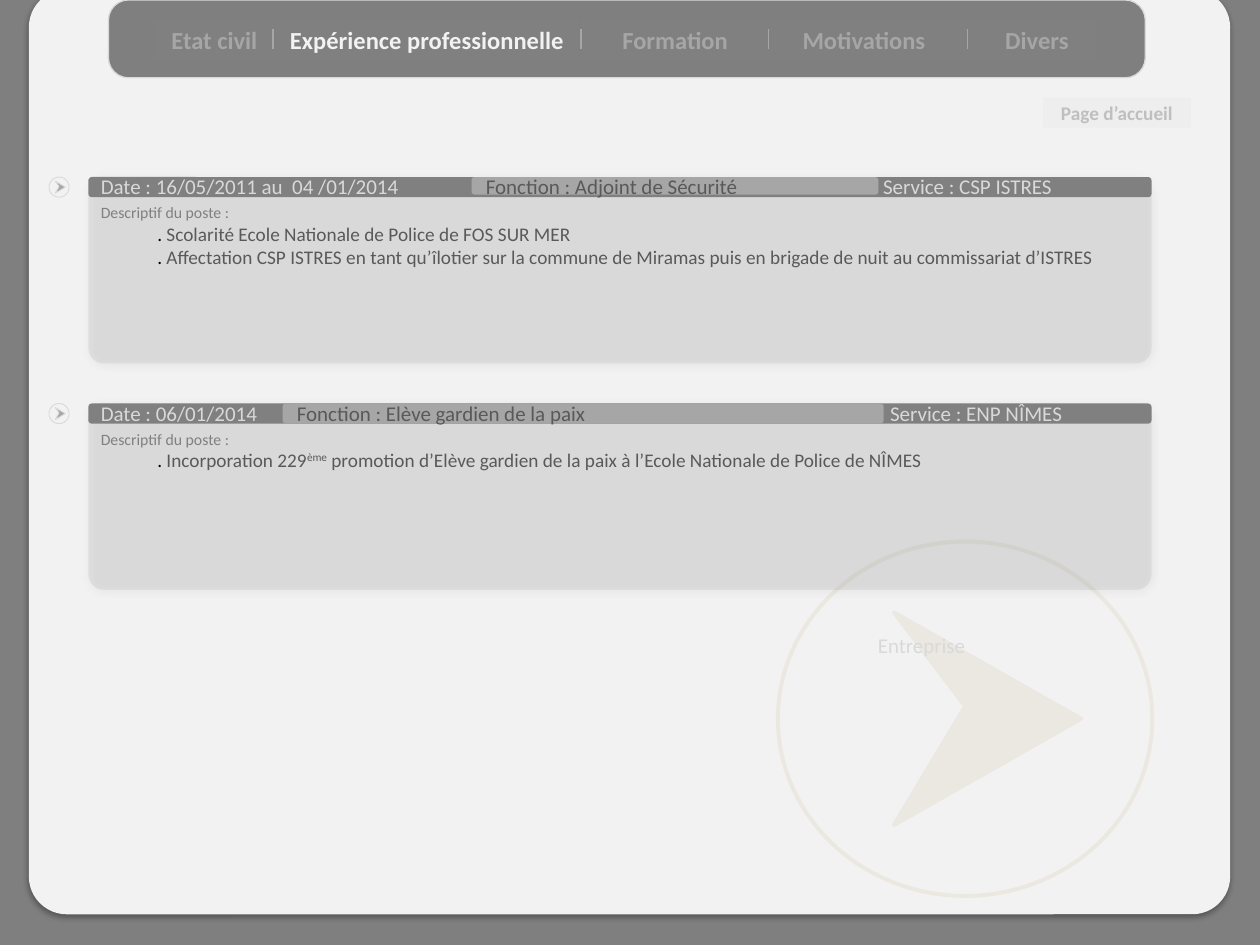
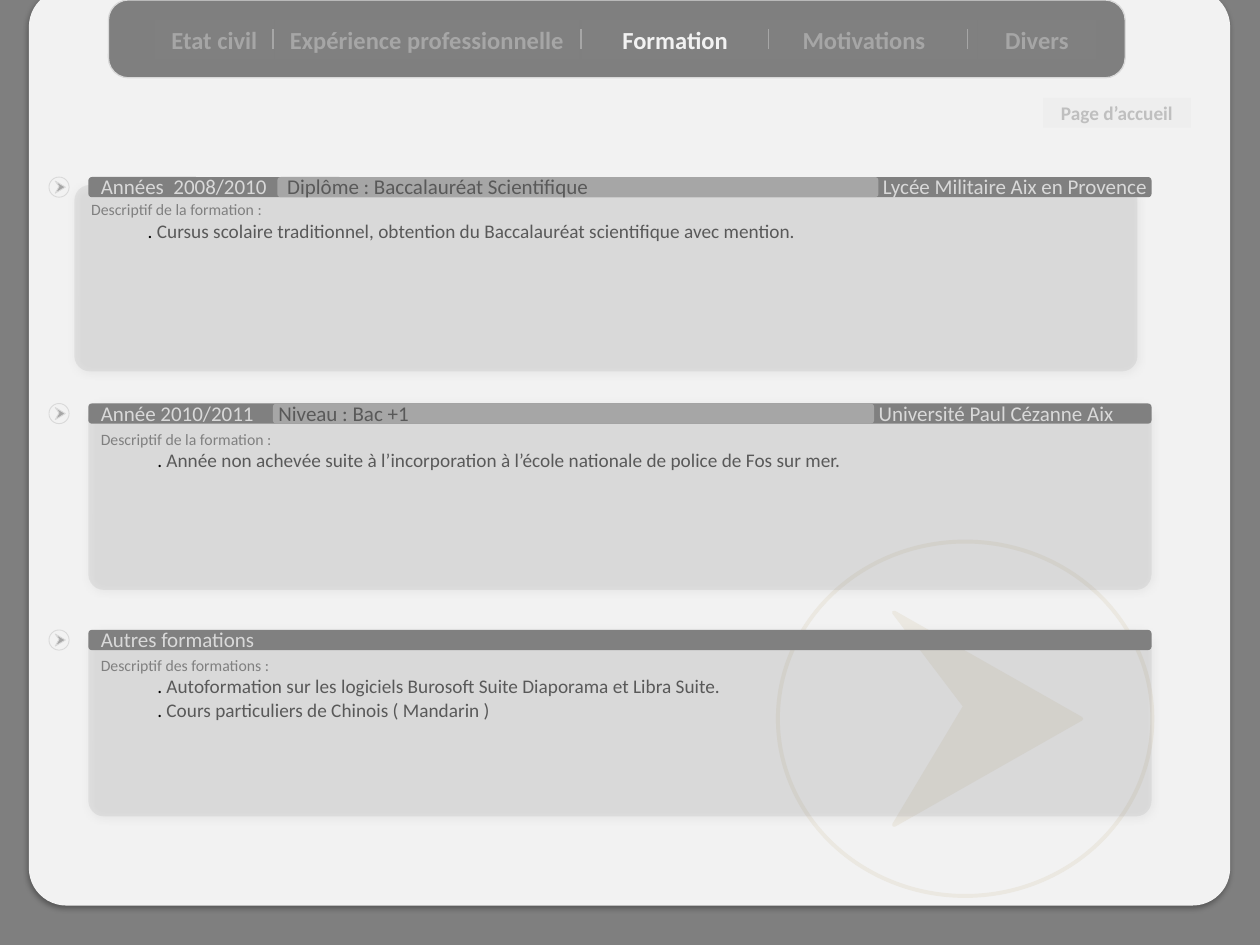
import dataclasses
import typing

import lxml.etree
import pptx
import pptx.dml.color
import pptx.enum.shapes
import pptx.enum.text
import pptx.oxml
import pptx.oxml.ns
import pptx.util

Pt = pptx.util.Pt
SHAPES = pptx.enum.shapes.MSO_SHAPE
ALIGN = pptx.enum.text.PP_ALIGN
ANCHOR = pptx.enum.text.MSO_ANCHOR

FONT = "Calibri"
COLOURS = {
    "backdrop": "7F7F7F",
    "panel": "F2F2F2",
    "watermark": "EBE8E1",
    "strip": "808080",
    "muted": "A6A6A6",
    "pale": "D9D9D9",
    "text": "595959",
    "dot": "000000",
    "button": "EEEEEE",
    "button_text": "BFBFBF",
}
TABS = [
    ("Etat civil", 88.5, 68),
    ("Expérience professionnelle", 157, 174),
    ("Formation", 332.5, 106.5),
    ("Motivations", 429, 129.5),
    ("Divers", 558.5, 68),
]
SEPARATORS = [156, 332, 439, 553]
ENTRY_LEFT, ENTRY_TOP, ENTRY_PITCH = 50.5, 101.2, 129.4
ENTRY_WIDTH, ENTRY_HEIGHT, STRIP_HEIGHT = 607.5, 106.5, 11.5


@dataclasses.dataclass
class Label:
    text: str
    left: float
    width: float


@dataclasses.dataclass
class Entry:
    period: str
    caption: str
    lines: list
    role: typing.Optional[Label] = None
    role_bar: tuple = ()
    place: typing.Optional[Label] = None
    card_shift: tuple = (0, 0)
    body_shift: tuple = (0, 0)


def colour(name):
    return pptx.dml.color.RGBColor.from_string(COLOURS[name])


def paint(shape, fill=None, line=None, weight=0.75):
    shape.shadow.inherit = False
    if fill:
        shape.fill.solid()
        shape.fill.fore_color.rgb = colour(fill)
    else:
        shape.fill.background()
    if line:
        shape.line.color.rgb = colour(line)
        shape.line.width = Pt(weight)
    else:
        shape.line.fill.background()


def add_box(page, kind, box, fill=None, line=None, weight=0.75, corner=None):
    shape = page.shapes.add_shape(kind, *map(Pt, box))
    paint(shape, fill, line, weight)
    if corner is not None:
        shape.adjustments[0] = corner
    return shape


def add_child(parent, tag, **values):
    child = lxml.etree.SubElement(parent, pptx.oxml.ns.qn(tag))
    for key, value in values.items():
        child.set(key, str(value))
    return child


def add_shadow(shape, opacity, blur, distance, angle):
    effects = shape._element.spPr.find(pptx.oxml.ns.qn("a:effectLst"))
    shadow = add_child(effects, "a:outerShdw", blurRad=Pt(blur), dist=Pt(distance),
                       dir=angle * 60000, algn="ctr", rotWithShape=0)
    add_child(add_child(shadow, "a:srgbClr", val="000000"), "a:alpha", val=opacity * 1000)


def style(para, size, name=None, bold=False):
    para.font.name = FONT
    para.font.size = Pt(size)
    para.font.bold = bold
    if name:
        para.font.color.rgb = colour(name)


def add_text(page, text, box, size, name):
    shape = page.shapes.add_textbox(*map(Pt, box))
    shape.text_frame.word_wrap = True
    para = shape.text_frame.paragraphs[0]
    para.text = text
    style(para, size, name)
    return shape.text_frame


def add_button(page, text, box, fill, size, name):
    frame = add_box(page, SHAPES.RECTANGLE, box, fill).text_frame
    frame.margin_left = frame.margin_right = 0
    frame.margin_top = frame.margin_bottom = 0
    frame.vertical_anchor = ANCHOR.MIDDLE
    para = frame.paragraphs[0]
    para.text = text
    para.alignment = ALIGN.CENTER
    style(para, size, name, bold=True)


def add_arrow_disc(page, box, fill, line, weight):
    left, top, width, height = box
    add_box(page, SHAPES.OVAL, box, None, line, weight)
    corners = [(0.31, 0.2), (0.81, 0.5), (0.31, 0.8), (0.5, 0.465)]
    points = [(Pt(left + x * width), Pt(top + y * height)) for x, y in corners]
    builder = page.shapes.build_freeform(*points[0])
    builder.add_line_segments(points[1:], close=True)
    paint(builder.convert_to_shape(), fill, line, weight)


def add_backdrop(page, panel_height):
    page.background.fill.solid()
    page.background.fill.fore_color.rgb = colour("backdrop")
    panel = add_box(page, SHAPES.ROUNDED_RECTANGLE, (16.5, -6, 686.5, panel_height),
                    "panel", corner=0.041)
    add_shadow(panel, 32, 3.5, 2.2, 90)
    add_arrow_disc(page, (444.5, 309.5, 214, 202.5), "watermark", "watermark", 2.25)


def add_navigation(page, active, width):
    add_box(page, SHAPES.ROUNDED_RECTANGLE, (62, 0, width, 44.5), "backdrop", "pale",
            corner=0.259)
    for text, left, tab_width in TABS:
        add_button(page, text, (left, 11.5, tab_width, 22.5), "strip", 14,
                   "panel" if text == active else "muted")
    for x in SEPARATORS:
        line = page.shapes.add_connector(pptx.enum.shapes.MSO_CONNECTOR.STRAIGHT,
                                         Pt(x), Pt(16.5), Pt(x), Pt(28))
        line.line.color.rgb = colour("muted")
        line.line.width = Pt(0.75)
        add_child(line._element.spPr, "a:effectLst")
    add_button(page, "Page d’accueil", (596, 56, 84.5, 17), "button", 11, "button_text")


def add_description(page, entry, box):
    frame = add_text(page, entry.caption, box, 9, "strip")
    for line in entry.lines:
        para = frame.add_paragraph()
        style(para, 11)
        para._p.get_or_add_pPr().set("marL", str(Pt(32.3)))
        dot = para.add_run()
        dot.text = ". "
        dot.font.color.rgb = colour("dot")
        for index, part in enumerate(line.split("^")):
            span = para.add_run()
            span.text = part
            span.font.color.rgb = colour("text")
            if index % 2:
                span._r.get_or_add_rPr().set("baseline", "30000")


def add_entry(page, entry, top):
    shift_x, shift_y = entry.card_shift
    card = add_box(page, SHAPES.ROUNDED_RECTANGLE,
                   (ENTRY_LEFT + shift_x, top + shift_y, ENTRY_WIDTH, ENTRY_HEIGHT),
                   "backdrop", corner=0.083)
    tint = card._element.spPr.find(pptx.oxml.ns.qn("a:solidFill"))[0]
    add_child(tint, "a:alpha", val=12000)
    add_shadow(card, 40, 5, 0, 0)
    add_box(page, SHAPES.ROUNDED_RECTANGLE, (ENTRY_LEFT, top, ENTRY_WIDTH, STRIP_HEIGHT), "strip")
    if entry.role_bar:
        left, width, height = entry.role_bar
        add_box(page, SHAPES.ROUNDED_RECTANGLE, (left, top, width, height), "muted")
    period = Label(entry.period, ENTRY_LEFT, 219)
    for label, name in [(entry.role, "text"), (period, "pale"), (entry.place, "pale")]:
        if label:
            add_text(page, label.text, (label.left, top - 5.5, label.width, 21.5), 12, name)
    add_arrow_disc(page, (28, top, STRIP_HEIGHT, STRIP_HEIGHT), "muted", "pale", 0.5)
    shift_x, shift_y = entry.body_shift
    add_description(page, entry, (ENTRY_LEFT + shift_x, top + 11.2 + shift_y, 596, 97))


def build_page(deck, active, entries, panel_height, navigation_width):
    page = deck.slides.add_slide(deck.slide_layouts[6])
    add_backdrop(page, panel_height)
    for index, entry in enumerate(entries):
        add_entry(page, entry, ENTRY_TOP + index * ENTRY_PITCH)
    add_navigation(page, active, navigation_width)
    return page


JOBS = [
    Entry("Date : 16/05/2011 au  04 /01/2014", "Descriptif du poste :",
          ["Scolarité Ecole Nationale de Police de FOS SUR MER",
           "Affectation CSP ISTRES en tant qu’îlotier sur la commune de Miramas puis "
           "en brigade de nuit au commissariat d’ISTRES"],
          Label("Fonction : Adjoint de Sécurité", 270.5, 259), (269.5, 232.5, 10),
          Label("Service : CSP ISTRES", 497.5, 135)),
    Entry("Date : 06/01/2014", "Descriptif du poste :",
          ["Incorporation 229^ème^ promotion d’Elève gardien de la paix à l’Ecole "
           "Nationale de Police de NÎMES"],
          Label("Fonction : Elève gardien de la paix", 162.5, 209), (161.5, 343.5, 11.5),
          Label("Service : ENP NÎMES", 501.5, 135)),
]
STUDIES = [
    Entry("Années  2008/2010", "Descriptif de la formation :",
          ["Cursus scolaire traditionnel, obtention du Baccalauréat scientifique avec mention."],
          Label("Diplôme : Baccalauréat Scientifique", 157, 237), (158.5, 343.5, 11.5),
          Label("Lycée Militaire Aix en Provence", 497.5, 188), (-8, 4.5), (-5.5, -1.7)),
    Entry("Année 2010/2011", "Descriptif de la formation :",
          ["Année non achevée suite à l’incorporation à l’école nationale de police de "
           "Fos sur mer."],
          Label("Niveau : Bac +1", 152, 135), (156, 343.5, 11.5),
          Label("Université Paul Cézanne Aix", 495, 166)),
    Entry("Autres formations", "Descriptif des formations :",
          ["Autoformation sur les logiciels Burosoft Suite Diaporama et Libra Suite.",
           "Cours particuliers de Chinois ( Mandarin )"]),
]


def main():
    deck = pptx.Presentation()
    deck.slide_width, deck.slide_height = Pt(720), Pt(540)
    page = build_page(deck, "Expérience professionnelle", JOBS, 528.5, 592.5)
    add_text(page, "Entreprise", (494.5, 358, 135, 21.5), 12, "pale")
    build_page(deck, "Formation", STUDIES, 523.5, 581)
    deck.save("out.pptx")


if __name__ == "__main__":
    main()
